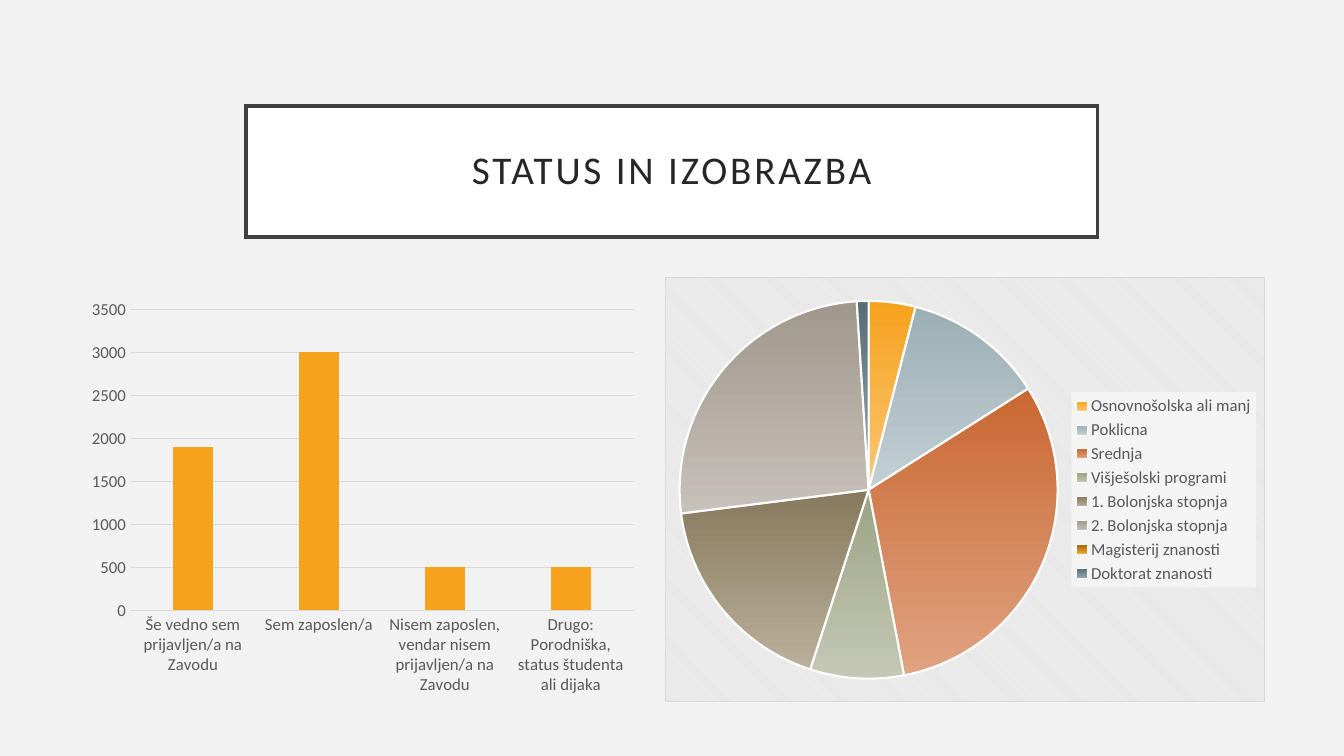
from dataclasses import dataclass

from lxml import etree
from pptx import Presentation, oxml
from pptx.chart.data import CategoryChartData
from pptx.dml.color import RGBColor
from pptx.enum import chart as ch, shapes, text
from pptx.oxml import ns
from pptx.util import Pt


@dataclass(frozen=True)
class Theme:
    font: str = "Calibri"
    title_size: int = 28
    label_size: int = 12
    base_size: int = 10
    background: str = "F2F2F2"
    white: str = "FFFFFF"
    frame: str = "404040"
    title: str = "262626"
    base: str = "000000"
    label: str = "595959"
    rule: str = "D9D9D9"
    hatch: str = "E6E6E6"
    bar: str = "F6A21D"
    slices: tuple = (
        ("F6A21D", "FAC777"), ("9BAFB5", "C3CFD3"),
        ("C96731", "E0A382"), ("9CA383", "C4C8B5"),
        ("87795D", "BAB09B"), ("A0988C", "C6C1BA"),
        ("9F6406", "F7AD38"), ("566D74", "95AAB0"),
    )


THEME = Theme()

STATUS = {
    "Še vedno sem prijavljen/a na Zavodu": 1900,
    "Sem zaposlen/a": 3000,
    "Nisem zaposlen, vendar nisem prijavljen/a na Zavodu": 500,
    "Drugo: Porodniška, status študenta ali dijaka": 500,
}
EDUCATION = {
    "Osnovnošolska ali manj": 4,
    "Poklicna": 12,
    "Srednja": 31,
    "Višješolski programi": 8,
    "1. Bolonjska stopnja": 18,
    "2. Bolonjska stopnja": 26,
    "Magisterij znanosti": 0,
    "Doktorat znanosti": 1,
}


def rgb(value):
    return RGBColor.from_string(value)


def style_font(font, size, color):
    font.name = THEME.font
    font.size = Pt(size)
    font.color.rgb = rgb(color)


def style_line(line, color, width):
    line.color.rgb = rgb(color)
    line.width = Pt(width)


def insert_before(sibling, xml):
    """Parse a chart element and put it ahead of its sibling."""
    declarations = ns.nsdecls("c", "a")
    sibling.addprevious(oxml.parse_xml(xml.replace(" ", f" {declarations} ", 1)))


def add_title(slide, wording, left, top, width, height):
    title = slide.shapes.add_shape(
        shapes.MSO_SHAPE.RECTANGLE, Pt(left), Pt(top), Pt(width), Pt(height))
    title.shadow.inherit = False
    title.fill.solid()
    title.fill.fore_color.rgb = rgb(THEME.white)
    style_line(title.line, THEME.frame, 2.5)
    outline = title.element.xpath("p:spPr/a:ln")[0]
    etree.SubElement(outline, ns.qn("a:miter"), lim="800000")

    frame = title.text_frame
    frame.word_wrap = True
    frame.vertical_anchor = text.MSO_ANCHOR.MIDDLE
    frame.margin_left = frame.margin_right = Pt(14.4)
    frame.margin_top = frame.margin_bottom = Pt(14.4)
    frame.text = wording
    heading = frame.paragraphs[0]
    heading.alignment = text.PP_ALIGN.CENTER
    heading.line_spacing = 0.9
    run = heading.runs[0]
    style_font(run.font, THEME.title_size, THEME.title)
    run.font._element.set("spc", "200")


def add_chart(slide, kind, values, left, top, width, height):
    data = CategoryChartData()
    data.categories = list(values)
    data.add_series("Series 1", list(values.values()))
    chart = slide.shapes.add_chart(
        kind, Pt(left), Pt(top), Pt(width), Pt(height), data).chart
    chart.has_title = False
    chart.has_legend = False
    style_font(chart.font, THEME.base_size, THEME.base)
    return chart


def style_axis(axis):
    axis.major_tick_mark = ch.XL_TICK_MARK.NONE
    axis.minor_tick_mark = ch.XL_TICK_MARK.NONE
    style_font(axis.tick_labels.font, THEME.label_size, THEME.label)


def add_status_columns(slide, *box):
    chart = add_chart(slide, ch.XL_CHART_TYPE.COLUMN_CLUSTERED, STATUS, *box)
    plot = chart.plots[0]
    plot.vary_by_categories = False
    plot.gap_width = 219
    plot.overlap = -27
    bars = plot.series[0].format.fill
    bars.solid()
    bars.fore_color.rgb = rgb(THEME.bar)

    for axis in (chart.category_axis, chart.value_axis):
        style_axis(axis)
    style_line(chart.category_axis.format.line, THEME.rule, 0.75)
    scale = chart.value_axis
    scale.format.line.fill.background()
    scale.minimum_scale, scale.maximum_scale, scale.major_unit = 0, 3500, 500
    style_line(scale.major_gridlines.format.line, THEME.rule, 0.75)


def add_education_pie(slide, *box):
    chart = add_chart(slide, ch.XL_CHART_TYPE.PIE, EDUCATION, *box)
    plot = chart.plots[0]
    plot.vary_by_categories = True

    # Slices fade from top to bottom
    for index, colors in enumerate(THEME.slices):
        portion = plot.series[0].points[index].format
        portion.fill.gradient()
        portion.fill.gradient_angle = 270
        for stop, color, position in zip(portion.fill.gradient_stops, colors, (0, 1)):
            stop.color.rgb = rgb(color)
            stop.position = position
        style_line(portion.line, THEME.white, 1.5)

    # Legend on a translucent panel
    chart.has_legend = True
    legend = chart.legend
    legend.position = ch.XL_LEGEND_POSITION.RIGHT
    legend.include_in_layout = False
    style_font(legend.font, THEME.label_size, THEME.label)
    space = chart.element
    insert_before(
        space.xpath("c:chart/c:legend/c:txPr")[0],
        f'<c:spPr ><a:solidFill><a:srgbClr val="{THEME.white}">'
        '<a:alpha val="50000"/></a:srgbClr></a:solidFill></c:spPr>')

    # Hatched chart area with square corners
    insert_before(space.xpath("c:chart")[0], '<c:roundedCorners val="0"/>')
    insert_before(
        space.xpath("c:txPr")[0],
        '<c:spPr ><a:pattFill prst="dkDnDiag">'
        f'<a:fgClr><a:srgbClr val="{THEME.white}"/></a:fgClr>'
        f'<a:bgClr><a:srgbClr val="{THEME.hatch}"/></a:bgClr></a:pattFill>'
        f'<a:ln w="9525"><a:solidFill><a:srgbClr val="{THEME.rule}"/>'
        '</a:solidFill></a:ln></c:spPr>')


def main():
    deck = Presentation()
    deck.slide_width, deck.slide_height = Pt(960), Pt(540)
    slide = deck.slides.add_slide(deck.slide_layouts[6])
    slide.background.fill.solid()
    slide.background.fill.fore_color.rgb = rgb(THEME.background)

    add_title(slide, "STATUS IN IZOBRAZBA", 175.7, 75.6, 608.4, 93.6)
    add_status_columns(slide, 57.6, 208, 403.2, 293.8)
    add_education_pie(slide, 475.2, 198, 428.4, 303.8)
    deck.save("out.pptx")


if __name__ == "__main__":
    main()
